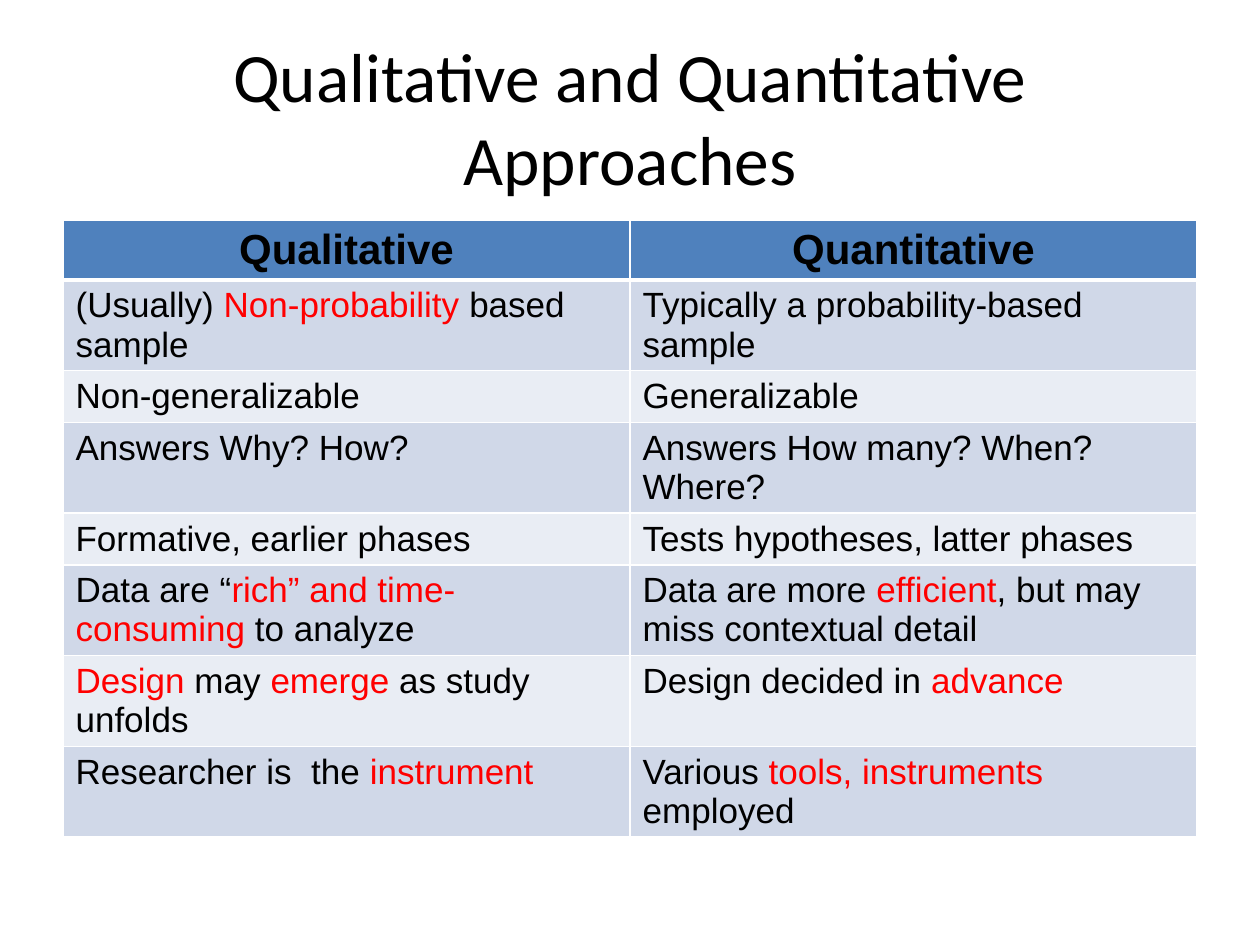
from lxml import etree
from pptx import Presentation
from pptx.dml.color import RGBColor
from pptx.enum.text import MSO_ANCHOR, MSO_AUTO_SIZE, PP_ALIGN
from pptx.oxml.ns import qn
from pptx.util import Inches, Pt

LEFT, CENTER = PP_ALIGN.LEFT, PP_ALIGN.CENTER
MIDDLE, FIXED = MSO_ANCHOR.MIDDLE, MSO_AUTO_SIZE.NONE
TITLE_ONLY = 5

ROWS = [
    ("Qualitative", "Quantitative"),
    ("(Usually) *Non-probability *based sample",
     "Typically a probability-based sample"),
    ("Non-generalizable", "Generalizable"),
    ("Answers Why? How?", "Answers How many? When? Where?"),
    ("Formative, earlier phases", "Tests hypotheses, latter phases"),
    ("Data are “*rich” and time-consuming *to analyze",
     "Data are more *efficient*, but may miss contextual detail"),
    ("*Design* may *emerge* as study unfolds",
     "Design decided in *advance*"),
    ("Researcher is  the *instrument*",
     "Various *tools, instruments *employed"),
]


def color(code):
    return RGBColor.from_string(code)


def write(frame, text, font="Arial", size=20, ink="000000", mark="FF0000",
          bold=False, align=LEFT):
    para = frame.paragraphs[0]
    para.alignment = align
    for i, part in enumerate(text.split("*")):
        if part:
            run = para.add_run()
            run.text = part
            run.font.name = font
            run.font.size = Pt(size)
            run.font.bold = bold
            run.font.color.rgb = color(mark if i % 2 else ink)


def edge(cell, side, width, code="FFFFFF"):
    props = cell._tc.get_or_add_tcPr()
    line = etree.SubElement(props, qn(f"a:ln{side}"), w=str(Pt(width)))
    fill = etree.SubElement(line, qn("a:solidFill"))
    etree.SubElement(fill, qn("a:srgbClr"), val=code)


class Deck:
    head = "4F81BD"
    bands = ("E9EDF4", "D0D8E8")

    def __init__(self):
        self.file = Presentation()
        self.file.slide_width = Inches(10)
        self.file.slide_height = Inches(7.5)
        self.slide = self.file.slides.add_slide(
            self.file.slide_layouts[TITLE_ONLY])

    def box(self, x, y, w, h):
        wide, high = self.file.slide_width, self.file.slide_height
        return int(x * wide), int(y * high), int(w * wide), int(h * high)

    def title(self, text, *area):
        shape = self.slide.shapes.title
        shape.left, shape.top, shape.width, shape.height = self.box(*area)
        frame = shape.text_frame
        frame.auto_size = FIXED
        frame.word_wrap = True
        frame.vertical_anchor = MIDDLE
        write(frame, text, font="Calibri", size=39.6, align=CENTER)

    def table(self, rows, *area, row=0.41):
        shape = self.slide.shapes.add_table(
            len(rows), len(rows[0]), *self.box(*area))
        grid = shape.table
        for r, texts in enumerate(rows):
            grid.rows[r].height = Inches(row)
            for c, text in enumerate(texts):
                self.cell(grid.cell(r, c), text, r)
        shape.height = self.box(*area)[3]

    def cell(self, cell, text, r):
        top = r == 0
        for side in "LRTB":
            thick = (top and side == "B") or (r == 1 and side == "T")
            edge(cell, side, 3 if thick else 1)
        cell.fill.solid()
        cell.fill.fore_color.rgb = color(self.head if top else self.bands[r % 2])
        write(cell.text_frame, text, size=24 if top else 20, bold=top,
              align=CENTER if top else LEFT)


def main():
    deck = Deck()
    deck.title("Qualitative and Quantitative Approaches",
               0.05, 0.04, 0.9, 1.25 / 7.5)
    deck.table(ROWS, 0.05, 1.75 / 7.5, 0.9, 5.2 / 7.5)
    deck.file.save("out.pptx")


if __name__ == "__main__":
    main()
